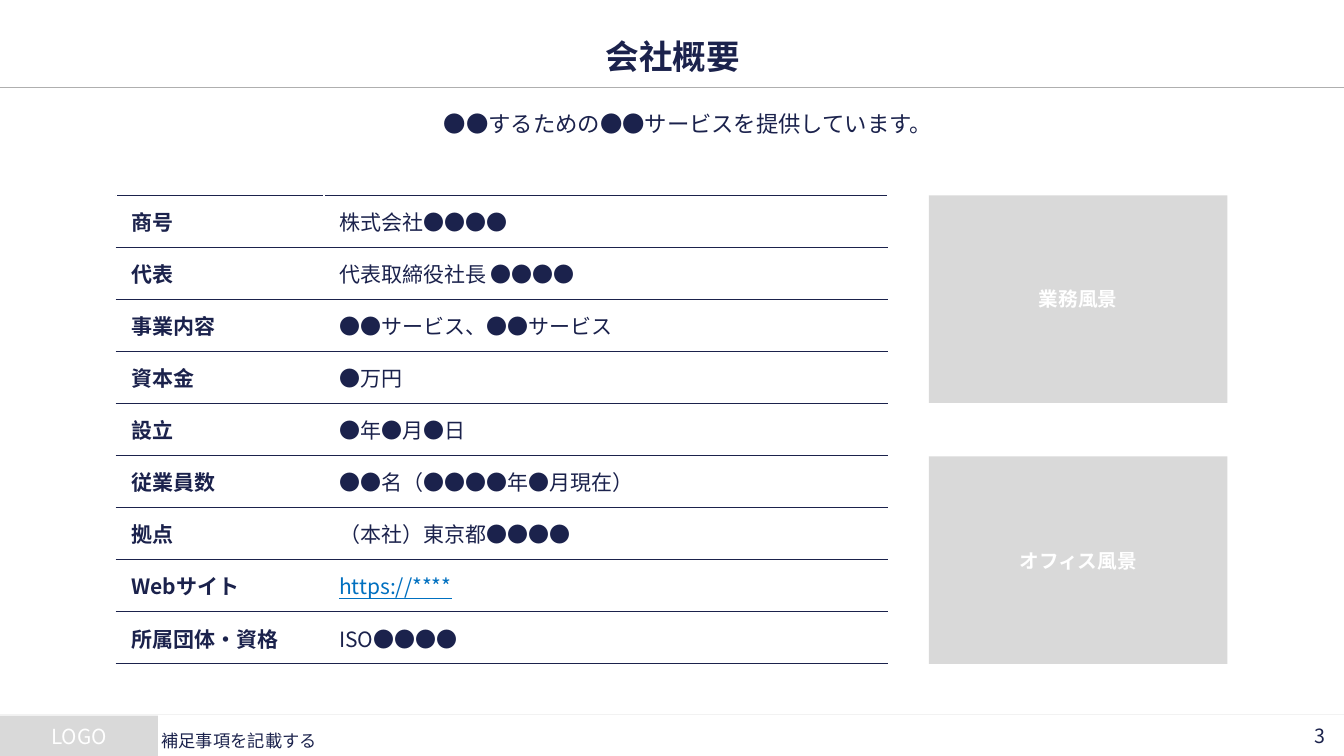
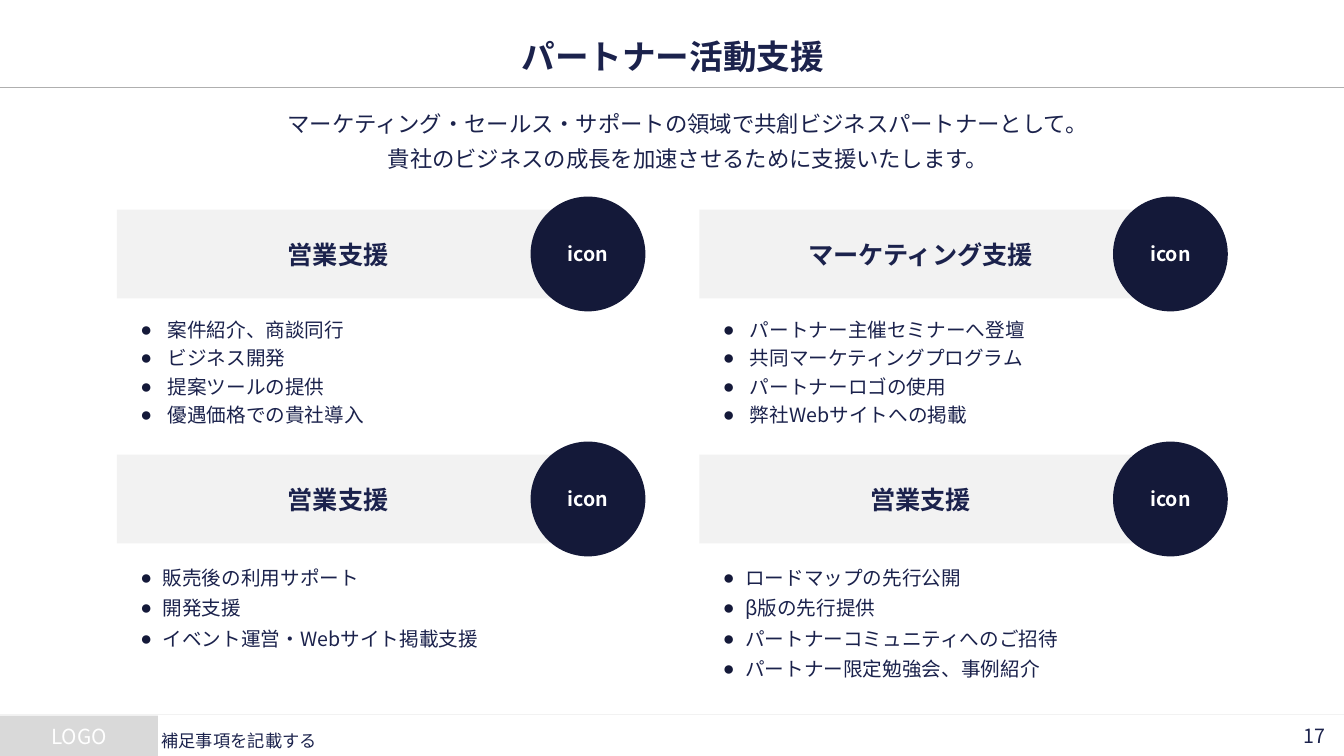
from lxml.etree import SubElement
from pptx import Presentation
from pptx.dml.color import RGBColor
from pptx.enum.shapes import MSO_CONNECTOR, MSO_SHAPE
from pptx.enum.text import MSO_ANCHOR as Anchor, PP_ALIGN as Align
from pptx.oxml.ns import qn
from pptx.util import Pt

# Content
COMPANY_TITLE = "会社概要"
COMPANY_LEAD = ["●●するための●●サービスを提供しています。"]
COMPANY_FACTS = [
    ("商号", "株式会社●●●●"),
    ("代表", "代表取締役社長 ●●●●"),
    ("事業内容", "●●サービス、●●サービス"),
    ("資本金", "●万円"),
    ("設立", "●年●月●日"),
    ("従業員数", "●●名（●●●●年●月現在）"),
    ("拠点", "（本社）東京都●●●●"),
    ("Webサイト", "https://****"),
    ("所属団体・資格", "ISO●●●●"),
]
PHOTO_AREAS = ["業務風景", "オフィス風景"]

PARTNER_TITLE = "パートナー活動支援"
PARTNER_LEAD = [
    "マーケティング・セールス・サポートの領域で共創ビジネスパートナーとして。",
    "貴社のビジネスの成長を加速させるために支援いたします。",
]
SUPPORT_ROWS = [
    [
        ("営業支援", ["案件紹介、商談同行", "ビジネス開発", "提案ツールの提供",
                  "優遇価格での貴社導入"]),
        ("マーケティング支援", ["パートナー主催セミナーへ登壇", "共同マーケティングプログラム",
                       "パートナーロゴの使用", "弊社Webサイトへの掲載"]),
    ],
    [
        ("営業支援", ["販売後の利用サポート", "開発支援", "イベント運営・Webサイト掲載支援"]),
        ("営業支援", ["ロードマップの先行公開", "β版の先行提供",
                  "パートナーコミュニティへのご招待", "パートナー限定勉強会、事例紹介"]),
    ],
]
FOOTNOTE = "補足事項を記載する"

# Style
FONT = "Noto Sans CJK JP"
NAVY = RGBColor(0x1B, 0x22, 0x4C)
DARK = RGBColor(0x14, 0x19, 0x39)
WHITE = RGBColor(0xFF, 0xFF, 0xFF)
GREY = RGBColor(0xD9, 0xD9, 0xD9)
PALE = RGBColor(0xF2, 0xF2, 0xF2)
RULE = RGBColor(0xAF, 0xAF, 0xAF)
LINK = RGBColor(0x00, 0x70, 0xC0)

SLIDE_W, SLIDE_H = 960, 540
FOOTER_TOP, FOOTER_H = 511.2, 28.8
TABLE_LEFT, TABLE_TOP, ROW_H = 83, 139.5, 37.2
FACT_COLUMNS = (148.5, 402.5)
PHOTO_LEFT, PHOTO_W, PHOTO_H, PHOTO_STEP = 663.5, 213.3, 148.3, 186.5
CARD_LEFT, CARD_STEP_X = 83, 416
CARD_TOP, CARD_STEP_Y = 149.7, 175
BAND_W, BAND_H, ICON_SIZE = 336, 63.4, 82
LIST_STYLES = [dict(indent=19.4, spacing=1.2), dict(indent=16, spacing=1.3)]


def write(frame, lines, size=14, color=NAVY, bold=False, underline=False, latin=FONT,
          align=Align.LEFT, anchor=Anchor.MIDDLE, insets=(3, 3, 3, 3),
          spacing=None, after=None, margin=0, indent=0, bullet=None):
    """Fill a text frame, one paragraph for each line."""
    frame.word_wrap = True
    frame.vertical_anchor = anchor
    (frame.margin_left, frame.margin_top,
     frame.margin_right, frame.margin_bottom) = map(Pt, insets)
    for i, line in enumerate(lines):
        para = frame.paragraphs[0] if i == 0 else frame.add_paragraph()
        para.alignment = align
        if spacing:
            para.line_spacing = spacing
        if after:
            para.space_after = Pt(after)
        props = para._p.get_or_add_pPr()
        if margin:
            props.set("marL", str(Pt(margin)))
            props.set("indent", str(Pt(indent)))
        if bullet:
            tint = SubElement(props, qn("a:buClr"))
            SubElement(tint, qn("a:srgbClr"), val=str(DARK))
            SubElement(props, qn("a:buFont"), typeface="Arial")
            SubElement(props, qn("a:buChar"), char=bullet)
        run = para.add_run()
        run.text = line
        font = run.font
        font.size, font.bold, font.underline = Pt(size), bold, underline
        font.color.rgb = color
        font.name = latin
        SubElement(font._element, qn("a:ea"), typeface=FONT)


def text_box(slide, left, top, width, height, lines, **style):
    box = slide.shapes.add_textbox(Pt(left), Pt(top), Pt(width), Pt(height))
    write(box.text_frame, lines, **style)


def block(slide, kind, left, top, width, height, fill, label=None, **style):
    shape = slide.shapes.add_shape(kind, Pt(left), Pt(top), Pt(width), Pt(height))
    shape.shadow.inherit = False
    shape.fill.solid()
    shape.fill.fore_color.rgb = fill
    shape.line.fill.background()
    if label:
        write(shape.text_frame, [label], color=WHITE, align=Align.CENTER, **style)


def rule_line(slide, y, color):
    line = slide.shapes.add_connector(MSO_CONNECTOR.STRAIGHT, 0, Pt(y), Pt(SLIDE_W), Pt(y))
    line.line.color.rgb = color
    line.line.width = Pt(0.75)
    SubElement(line._element.spPr, qn("a:effectLst"))


def border(cell):
    props = cell._tc.get_or_add_tcPr()
    sides = [("lnL", WHITE), ("lnR", WHITE), ("lnT", NAVY), ("lnB", NAVY)]
    for i, (side, color) in enumerate(sides):
        edge = props.makeelement(qn(f"a:{side}"), {"w": str(Pt(1))})
        fill = SubElement(edge, qn("a:solidFill"))
        SubElement(fill, qn("a:srgbClr"), val=str(color))
        props.insert(i, edge)


def framed_slide(deck, title, lead, number, lead_font=FONT):
    """Add a slide with the shared title, lead text and footer."""
    slide = deck.slides.add_slide(deck.slide_layouts[6])
    rule_line(slide, 510.5, PALE)
    block(slide, MSO_SHAPE.RECTANGLE, 0, FOOTER_TOP, 112.8, FOOTER_H, GREY, "LOGO", size=14.8)
    rule_line(slide, 62.2, RULE)
    text_box(slide, 62, 24.5, 837, 31, [title], size=24, bold=True, align=Align.CENTER)
    text_box(slide, 62, 70, 837, 62, lead, size=16, latin=lead_font, align=Align.CENTER,
             anchor=Anchor.TOP, spacing=1.3, margin=44.6, indent=-22.3)
    text_box(slide, 900.5, FOOTER_TOP, 60.5, FOOTER_H, [number], align=Align.RIGHT,
             insets=(6, 6, 14.4, 6))
    text_box(slide, 112.3, FOOTER_TOP, 734, FOOTER_H, [FOOTNOTE], size=12.3, spacing=1.5)
    return slide


def company_slide(deck):
    slide = framed_slide(deck, COMPANY_TITLE, COMPANY_LEAD, "3")
    # Company facts
    table = slide.shapes.add_table(
        len(COMPANY_FACTS), len(FACT_COLUMNS), Pt(TABLE_LEFT), Pt(TABLE_TOP),
        Pt(sum(FACT_COLUMNS)), Pt(ROW_H * len(COMPANY_FACTS))).table
    table.first_row = table.horz_banding = False
    for column, width in zip(table.columns, FACT_COLUMNS):
        column.width = Pt(width)
    for r, fact in enumerate(COMPANY_FACTS):
        table.rows[r].height = Pt(ROW_H)
        for c, value in enumerate(fact):
            cell = table.cell(r, c)
            cell.fill.background()
            border(cell)
            is_link = value.startswith("https")
            write(cell.text_frame, [value], size=15, bold=c == 0, underline=is_link,
                  color=LINK if is_link else NAVY, after=4)
            cell.vertical_anchor = Anchor.MIDDLE
            cell.margin_left = cell.margin_right = Pt(10.8)
            cell.margin_top = cell.margin_bottom = Pt(7.2)
    # Photo areas
    for i, label in enumerate(PHOTO_AREAS):
        block(slide, MSO_SHAPE.RECTANGLE, PHOTO_LEFT, TABLE_TOP + i * PHOTO_STEP,
              PHOTO_W, PHOTO_H, GREY, label, bold=True)


def support_card(slide, left, top, heading, points, indent, spacing):
    block(slide, MSO_SHAPE.RECTANGLE, left + 0.5, top, BAND_W, BAND_H, PALE)
    text_box(slide, left, top, 317, BAND_H, [heading], size=18, bold=True,
             align=Align.CENTER, after=6.8)
    block(slide, MSO_SHAPE.OVAL, left + 296, top + (BAND_H - ICON_SIZE) / 2,
          ICON_SIZE, ICON_SIZE, DARK, "icon", bold=True)
    text_box(slide, left, top + BAND_H, 377, 105, points, anchor=Anchor.TOP,
             insets=(17.3, 10.8, 10.8, 13.7), spacing=spacing,
             margin=indent, indent=-indent, bullet="●")


def partner_slide(deck):
    slide = framed_slide(deck, PARTNER_TITLE, PARTNER_LEAD, "17", lead_font="Arial")
    for r, (cards, list_style) in enumerate(zip(SUPPORT_ROWS, LIST_STYLES)):
        for c, (heading, points) in enumerate(cards):
            support_card(slide, CARD_LEFT + c * CARD_STEP_X, CARD_TOP + r * CARD_STEP_Y,
                         heading, points, **list_style)


def main():
    deck = Presentation()
    deck.slide_width, deck.slide_height = Pt(SLIDE_W), Pt(SLIDE_H)
    company_slide(deck)
    partner_slide(deck)
    deck.save("out.pptx")


if __name__ == "__main__":
    main()
